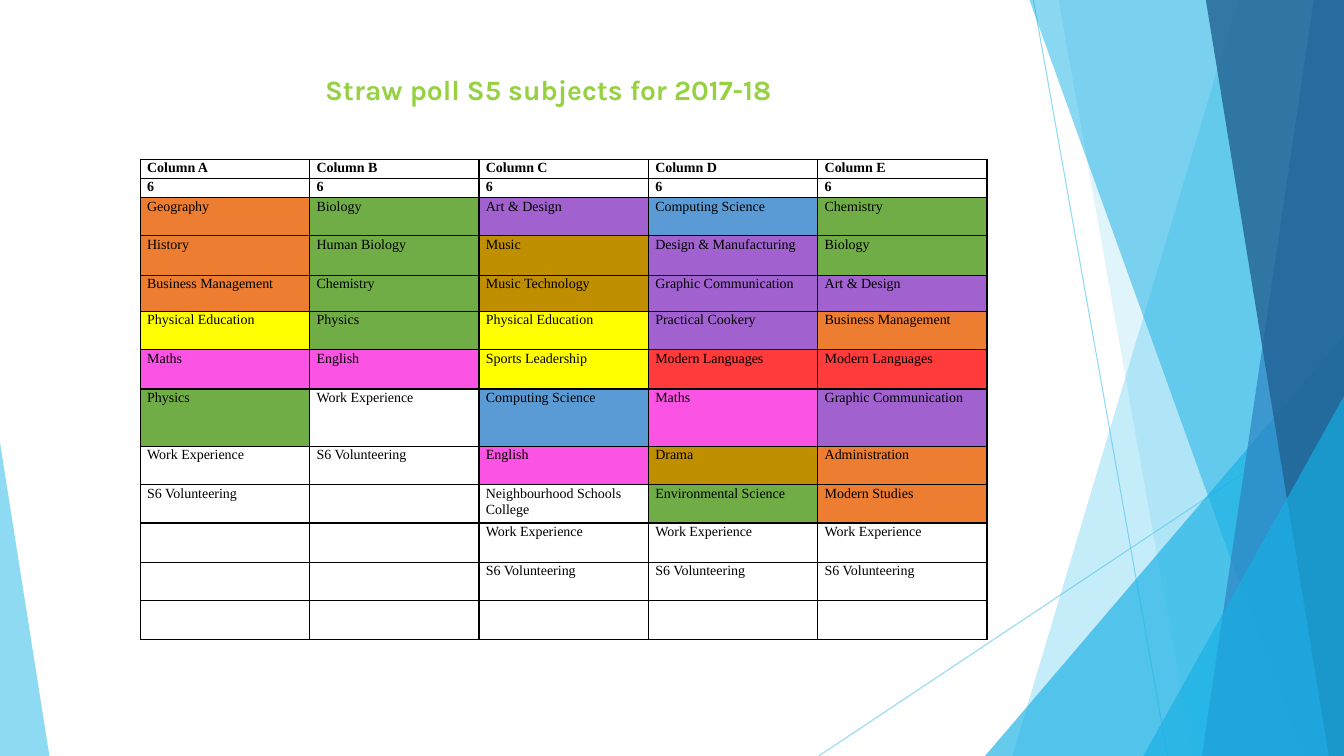
from dataclasses import dataclass
from itertools import zip_longest

from lxml.etree import SubElement as Sub
from pptx import Presentation as Deck
from pptx.dml.color import RGBColor as Rgb
from pptx.enum.shapes import MSO_CONNECTOR as Link, MSO_SHAPE as Preset
from pptx.enum.text import PP_ALIGN as Align
from pptx.oxml.ns import qn
from pptx.shapes.base import BaseShape as Shape
from pptx.slide import Slide
from pptx.table import Table, _Cell as Cell
from pptx.text.text import _Paragraph as Para
from pptx.util import Pt

PX = 9144  # EMU in one px, 100 px to the inch
WIDE, HIGH = 1333, 750


@dataclass(frozen=True)
class Theme:
    sky: str = "5FCBEF"
    aqua: str = "17B0E4"
    blue: str = "2E83C3"
    navy: str = "226292"
    lime: str = "96D141"
    ink: str = "000000"
    head_font: str = "Karla"
    cell_font: str = "Times New Roman"
    head_size: int = 20
    cell_size: int = 10
    hair: float = 0.75
    rule: float = 1
    veil: int = 70  # percent opaque


THEME = Theme()


@dataclass(frozen=True)
class Ray:
    start: tuple[int, int]
    end: tuple[int, int]


@dataclass(frozen=True)
class Facet:
    points: tuple[tuple[int, int], ...]
    tint: str
    alpha: int


@dataclass(frozen=True)
class Corner:
    box: tuple[int, int, int, int]
    peak: int  # 0 = apex at left, 1 = apex at right
    tint: str
    alpha: int


def pane(top: int, foot: int, tint: str, alpha: int) -> Facet:
    """A panel with a slanted left edge that runs to the slide's right edge."""
    return Facet(((top, 0), (WIDE, 0), (WIDE, HIGH), (foot, HIGH)), tint, alpha)


# Backdrop, from back to front
RAYS = (Ray((1025, 0), (1158, HIGH)), Ray((WIDE, 403), (812, HIGH)))
PARTS: tuple[Facet | Corner, ...] = (
    pane(1228, 1004, THEME.sky, 36),
    pane(1050, 1183, THEME.sky, 20),
    Corner((977, 333, 356, 417), 1, THEME.aqua, 66),
    pane(1021, 1291, THEME.aqua, 50),
    pane(1303, 1192, THEME.blue, 70),
    pane(1196, 1318, THEME.navy, 80),
    Corner((1134, 393, 199, 357), 1, THEME.aqua, 66),
    Corner((0, 439, 49, 311), 0, THEME.sky, THEME.veil),
)

# Each subject takes the colour of its group
GROUPS = {
    "ED7D31": ("Geography", "History", "Business Management",
               "Administration", "Modern Studies"),
    "70AD47": ("Biology", "Human Biology", "Chemistry", "Physics",
               "Environmental Science"),
    "A162D0": ("Art & Design", "Design & Manufacturing",
               "Graphic Communication", "Practical Cookery"),
    "BF8F00": ("Music", "Music Technology", "Drama"),
    "5B9BD5": ("Computing Science",),
    "FFFF00": ("Physical Education", "Sports Leadership"),
    "FB53E3": ("Maths", "English"),
    "FF3B3B": ("Modern Languages",),
}
TINTS = {name: tint for tint, names in GROUPS.items() for name in names}

ENDING = ("Work Experience", "S6 Volunteering")
PICKS = {
    "Column A": ("Geography", "History", "Business Management",
                 "Physical Education", "Maths", "Physics", *ENDING),
    "Column B": ("Biology", "Human Biology", "Chemistry", "Physics",
                 "English", *ENDING),
    "Column C": ("Art & Design", "Music", "Music Technology",
                 "Physical Education", "Sports Leadership",
                 "Computing Science", "English",
                 "Neighbourhood Schools College", *ENDING),
    "Column D": ("Computing Science", "Design & Manufacturing",
                 "Graphic Communication", "Practical Cookery",
                 "Modern Languages", "Maths", "Drama",
                 "Environmental Science", *ENDING),
    "Column E": ("Chemistry", "Biology", "Art & Design",
                 "Business Management", "Modern Languages",
                 "Graphic Communication", "Administration",
                 "Modern Studies", *ENDING),
}
LEVEL = "6"
HEADS = 2  # bold rows at the top
ROWS = (19, 19, 38, 39, 36, 38, 39, 57, 38, 38, 39, 38, 39)
COL = 168


def px(*sizes: int) -> list[int]:
    return [size * PX for size in sizes]


def fade(shape: Shape, alpha: int) -> None:
    for tone in shape._element.spPr.iter(qn("a:srgbClr")):
        Sub(tone, qn("a:alpha"), val=str(alpha * 1000))


def style(para: Para, name: str, size: int, tint: str, bold: bool) -> None:
    font = para.font
    font.name, font.size, font.bold = name, Pt(size), bold
    font.color.rgb = Rgb.from_string(tint)


def draw_ray(slide: Slide, ray: Ray) -> None:
    line = slide.shapes.add_connector(
        Link.STRAIGHT, *px(*ray.start, *ray.end))
    line.line.color.rgb = Rgb.from_string(THEME.sky)
    line.line.width = Pt(THEME.hair)
    fade(line, THEME.veil)
    Sub(line._element.spPr, qn("a:effectLst"))


def draw_part(slide: Slide, part: Facet | Corner) -> None:
    if isinstance(part, Facet):
        first, *rest = part.points
        path = slide.shapes.build_freeform(*first, scale=PX)
        path.add_line_segments(rest, close=True)
        shape = path.convert_to_shape()
    else:
        shape = slide.shapes.add_shape(
            Preset.ISOSCELES_TRIANGLE, *px(*part.box))
        shape.adjustments[0] = part.peak
    shape.shadow.inherit = False
    shape.line.fill.background()
    shape.fill.solid()
    shape.fill.fore_color.rgb = Rgb.from_string(part.tint)
    fade(shape, part.alpha)


def draw_title(slide: Slide, text: str) -> None:
    frame = slide.shapes.add_textbox(*px(74, 67, 940, 144)).text_frame
    frame.word_wrap = True
    para = frame.paragraphs[0]
    para.text, para.alignment = text, Align.CENTER
    style(para, THEME.head_font, THEME.head_size, THEME.lime, True)


def edge(cell: Cell) -> None:
    for side in ("lnL", "lnR", "lnT", "lnB"):
        line = Sub(cell._tc.get_or_add_tcPr(), qn(f"a:{side}"),
                   w=str(Pt(THEME.rule)))
        Sub(Sub(line, qn("a:solidFill")), qn("a:srgbClr"), val=THEME.ink)


def fill_cell(cell: Cell, text: str, bold: bool) -> None:
    cell.margin_left, cell.margin_top = px(7, 0)
    cell.margin_right, cell.margin_bottom = px(7, 0)
    edge(cell)
    if text in TINTS:
        cell.fill.solid()
        cell.fill.fore_color.rgb = Rgb.from_string(TINTS[text])
    else:
        cell.fill.background()
    para = cell.text_frame.paragraphs[0]
    para.text, para.line_spacing = text, 1.07
    style(para, THEME.cell_font, THEME.cell_size, THEME.ink, bold)


def draw_table(slide: Slide) -> Table:
    cols = [(head, LEVEL, *names) for head, names in PICKS.items()]
    table = slide.shapes.add_table(
        len(ROWS), len(cols),
        *px(139, 158, COL * len(cols), sum(ROWS))).table
    table.first_row = table.horz_banding = False
    for col in table.columns:
        col.width = COL * PX
    lines = zip_longest(ROWS, *cols, fillvalue="")
    for i, (high, *texts) in enumerate(lines):
        table.rows[i].height = high * PX
        for j, text in enumerate(texts):
            fill_cell(table.cell(i, j), text, i < HEADS)
    return table


def main() -> None:
    deck = Deck()
    deck.slide_width, deck.slide_height = px(WIDE, HIGH)
    slide = deck.slides.add_slide(deck.slide_layouts[6])
    for ray in RAYS:
        draw_ray(slide, ray)
    for part in PARTS:
        draw_part(slide, part)
    draw_title(slide, "Straw poll S5 subjects for 2017-18")
    draw_table(slide)
    deck.save("out.pptx")


if __name__ == "__main__":
    main()
